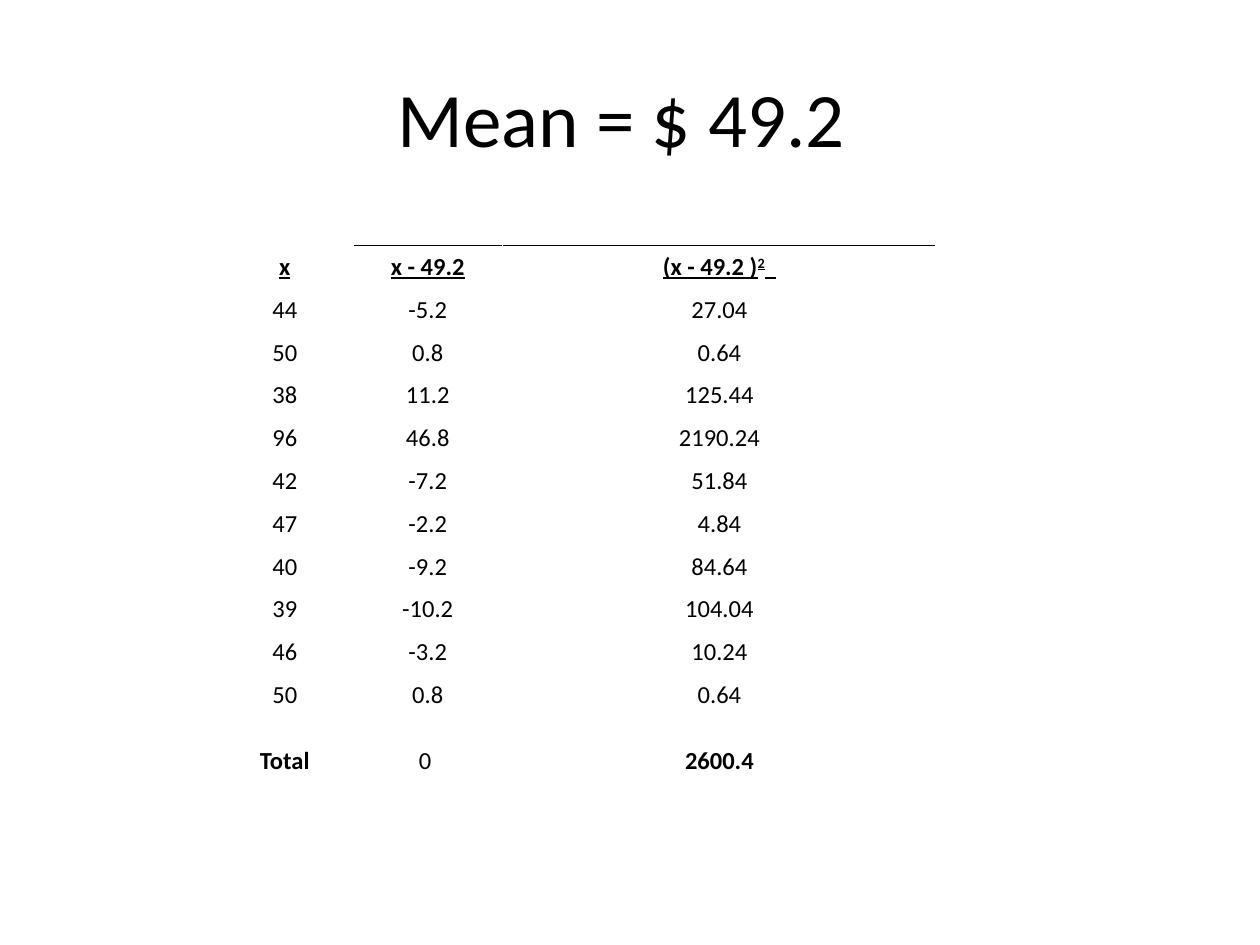
from dataclasses import dataclass

from lxml import etree
from pptx import Presentation
from pptx import util as u
from pptx.dml.color import RGBColor
from pptx.enum import text
from pptx.oxml import ns


@dataclass(frozen=True)
class Theme:
    font: str = "Calibri"
    ink: str = "000000"
    paper: str = "FFFFFF"
    title_size: int = 44
    table_size: int = 14
    rule_width: float = 1


THEME = Theme()
WIDTH, HEIGHT = u.Inches(10), u.Inches(7.5)

COLUMN_WIDTHS = (1.08, 1.19, 3.44)
ROW_HEIGHT, TOTAL_HEIGHT = 0.34, 0.71
HEADER = ("x", "x - 49.2", ("(x - 49.2 )", "2", "  "))
DATA = (
    ("44", "-5.2", "27.04"),
    ("50", "0.8", "0.64"),
    ("38", "11.2", "125.44"),
    ("96", "46.8", "2190.24"),
    ("42", "-7.2", "51.84"),
    ("47", "-2.2", "4.84"),
    ("40", "-9.2", "84.64"),
    ("39", "-10.2", "104.04"),
    ("46", "-3.2", "10.24"),
    ("50", "0.8", "0.64"),
)
TOTAL = ("Total", "0 ", "2600.4")


def style_paragraph(paragraph, size, bold=False, underline=False):
    paragraph.alignment = text.PP_ALIGN.CENTER
    font = paragraph.font
    font.name, font.size = THEME.font, u.Pt(size)
    font.bold, font.underline = bold, underline
    font.color.rgb = RGBColor.from_string(THEME.ink)


def add_title(slide, wording):
    title = slide.shapes.title
    title.left, title.top = int(WIDTH * 0.05), int(HEIGHT * 0.04)
    title.width, title.height = int(WIDTH * 0.9), u.Inches(1.25)
    title.text_frame.text = wording
    title.text_frame.vertical_anchor = text.MSO_ANCHOR.MIDDLE
    style_paragraph(title.text_frame.paragraphs[0], THEME.title_size)


def fill_cell(cell, content, bold=False, underline=False):
    """Write a string, or a (base, superscript, tail) tuple, into a cell."""
    cell.fill.solid()
    cell.fill.fore_color.rgb = RGBColor.from_string(THEME.paper)
    cell.vertical_anchor = text.MSO_ANCHOR.MIDDLE
    cell.margin_left = cell.margin_right = u.Inches(0.03)
    cell.margin_top = cell.margin_bottom = u.Inches(0.01)
    paragraph = cell.text_frame.paragraphs[0]
    parts = (content,) if isinstance(content, str) else content
    for index, part in enumerate(parts):
        run = paragraph.add_run()
        run.text = part
        if index == 1:
            run._r.get_or_add_rPr().set("baseline", "30000")
    style_paragraph(paragraph, THEME.table_size, bold, underline)


def add_top_rule(cell):
    line = etree.Element(ns.qn("a:lnT"), w=str(u.Pt(THEME.rule_width)))
    fill = etree.SubElement(line, ns.qn("a:solidFill"))
    etree.SubElement(fill, ns.qn("a:srgbClr"), val=THEME.ink)
    cell._tc.get_or_add_tcPr().insert(0, line)


def add_deviation_table(slide):
    rows = (HEADER, *DATA, TOTAL)
    heights = [ROW_HEIGHT] * (len(rows) - 1) + [TOTAL_HEIGHT]
    table = slide.shapes.add_table(
        len(rows), len(COLUMN_WIDTHS), u.Inches(1.72), int(HEIGHT * 0.26),
        u.Inches(sum(COLUMN_WIDTHS)), u.Inches(sum(heights))).table
    table.first_row = table.horz_banding = False
    for column, width in zip(table.columns, COLUMN_WIDTHS):
        column.width = u.Inches(width)
    for row, height, contents in zip(table.rows, heights, rows):
        row.height = u.Inches(height)
        is_header, is_total = contents is HEADER, contents is TOTAL
        for index, (cell, content) in enumerate(zip(row.cells, contents)):
            bold = is_header or (is_total and index != 1)
            fill_cell(cell, content, bold, is_header)
    for index in (1, 2):
        add_top_rule(table.cell(0, index))


def main():
    presentation = Presentation()
    presentation.slide_width, presentation.slide_height = WIDTH, HEIGHT
    slide = presentation.slides.add_slide(presentation.slide_layouts[5])
    add_title(slide, "Mean = $ 49.2 ")
    add_deviation_table(slide)
    presentation.save("out.pptx")


if __name__ == "__main__":
    main()
